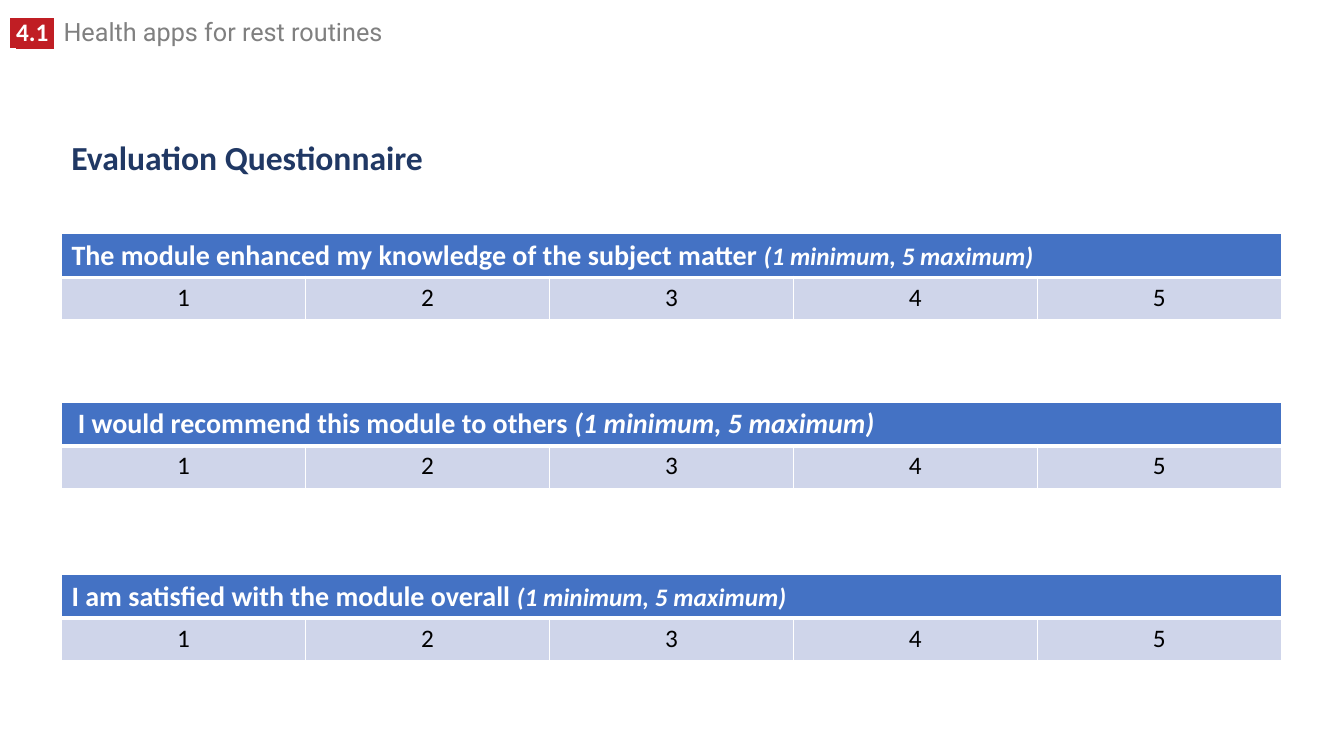
from lxml import etree
from pptx import Presentation
from pptx.dml.color import RGBColor
from pptx.enum.text import MSO_ANCHOR, MSO_AUTO_SIZE, PP_ALIGN
from pptx.oxml.ns import qn
from pptx.util import Inches, Pt

CENTER = PP_ALIGN.CENTER
MIDDLE = MSO_ANCHOR.MIDDLE
GROW = MSO_AUTO_SIZE.SHAPE_TO_FIT_TEXT

WHITE = RGBColor(0xFF, 0xFF, 0xFF)
BLACK = RGBColor(0x00, 0x00, 0x00)
RED = RGBColor(0xC0, 0x1E, 0x24)
GRAY = RGBColor(0x80, 0x80, 0x80)
NAVY = RGBColor(0x20, 0x38, 0x64)
BLUE = RGBColor(0x44, 0x72, 0xC4)
PALE_BLUE = RGBColor(0xCF, 0xD5, 0xEA)

LEFT, WIDTH = 0.61, 12.1
ROW_HEIGHT = 0.42
RATINGS = ["1", "2", "3", "4", "5"]
SCALE_HINT = "(1 minimum, 5 maximum)"
# Top, statement, size of the scale hint
QUESTIONS = [
    (2.32, "The module enhanced my knowledge of the subject matter ", 18),
    (3.99, " I would recommend this module to others ", 20),
    (5.7, "I am satisfied with the module overall ", 18),
]


def style_font(font, size, color, name="Calibri", bold=False):
    font.size = Pt(size)
    font.name = name
    font.bold = bold
    font.color.rgb = color


def add_run(paragraph, text, size, color, name="Calibri", bold=False):
    run = paragraph.add_run()
    run.text = text
    style_font(run.font, size, color, name, bold)
    return run


def highlight(run, color):
    mark = etree.Element(qn("a:highlight"))
    etree.SubElement(mark, qn("a:srgbClr"), val=str(color))
    run.font._element.find(qn("a:solidFill")).addnext(mark)


def add_text_box(slide, left, top, width, height, line_spacing):
    box = slide.shapes.add_textbox(
        Inches(left), Inches(top), Inches(width), Inches(height))
    frame = box.text_frame
    frame.word_wrap = True
    frame.paragraphs[0].line_spacing = line_spacing
    return frame


def set_borders(cell, top=1, bottom=1):
    properties = cell._tc.get_or_add_tcPr()
    for side, points in (("L", 1), ("R", 1), ("T", top), ("B", bottom)):
        line = etree.SubElement(properties, qn(f"a:ln{side}"), w=str(Pt(points)))
        fill = etree.SubElement(line, qn("a:solidFill"))
        etree.SubElement(fill, qn("a:srgbClr"), val=str(WHITE))


def fill_cell(cell, color):
    cell.fill.solid()
    cell.fill.fore_color.rgb = color


def add_question(slide, top, statement, hint_size):
    table = slide.shapes.add_table(
        2, len(RATINGS), Inches(LEFT), Inches(top),
        Inches(WIDTH), Inches(2 * ROW_HEIGHT)).table

    # Statement across the full width
    for cell in table.rows[0].cells:
        set_borders(cell, bottom=3)
        fill_cell(cell, BLUE)
    header = table.cell(0, 0)
    header.merge(table.cell(0, len(RATINGS) - 1))
    paragraph = header.text_frame.paragraphs[0]
    add_run(paragraph, statement, 20, WHITE, bold=True)
    hint = add_run(paragraph, SCALE_HINT, hint_size, WHITE, bold=True)
    hint.font.italic = True

    # Rating scale
    for cell, rating in zip(table.rows[1].cells, RATINGS):
        set_borders(cell, top=3)
        fill_cell(cell, PALE_BLUE)
        cell.text = rating
        paragraph = cell.text_frame.paragraphs[0]
        paragraph.alignment = CENTER
        style_font(paragraph.font, 18, BLACK)


def add_section_label(slide):
    frame = add_text_box(slide, 0, 0.11, 9.52, 0.42, 0.8)
    frame.auto_size = GROW
    paragraph = frame.paragraphs[0]
    for text, font_name in ((" ", "Roboto"), ("4.1 ", "Calibri")):
        highlight(add_run(paragraph, text, 18, WHITE, font_name, True), RED)
    add_run(paragraph, " ", 24, BLACK, "Arial")
    add_run(paragraph, "Health apps for rest routines", 18, GRAY, "Roboto")


def add_title(slide):
    frame = add_text_box(slide, LEFT, 1.18, WIDTH, 0.8, 0.9)
    frame.vertical_anchor = MIDDLE
    paragraph = frame.paragraphs[0]
    paragraph.text = "Evaluation Questionnaire"
    style_font(paragraph.font, 24, NAVY, bold=True)


def main():
    presentation = Presentation()
    presentation.slide_width = Inches(13.33)
    presentation.slide_height = Inches(7.5)
    slide = presentation.slides.add_slide(presentation.slide_layouts[6])

    add_section_label(slide)
    add_title(slide)
    for top, statement, hint_size in QUESTIONS:
        add_question(slide, top, statement, hint_size)

    presentation.save("out.pptx")


if __name__ == "__main__":
    main()
